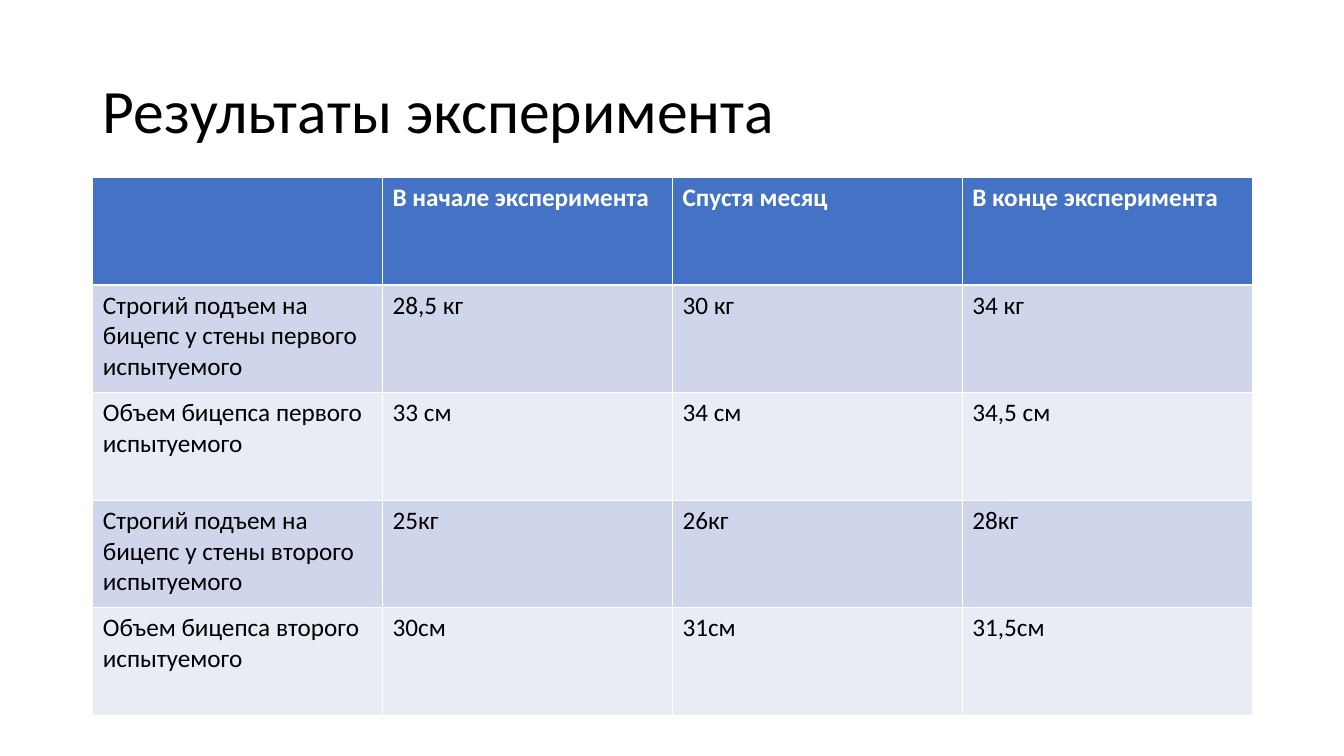
"""Build the slide with the table of experiment results."""
from pptx import Presentation
from pptx.dml.color import RGBColor
from pptx.enum.text import MSO_ANCHOR
from pptx.util import Inches, Pt

COLORS = {
    "header": "4472C4",
    "odd_row": "CFD5EA",
    "even_row": "E9EBF5",
    "header_text": "FFFFFF",
    "text": "000000",
}
FONT = "Calibri"
RESULTS = [
    ["", "В начале эксперимента", "Спустя месяц", "В конце эксперимента"],
    ["Строгий подъем на бицепс у стены первого испытуемого", "28,5 кг", "30 кг", "34 кг"],
    ["Объем бицепса первого испытуемого", "33 см", "34 см", "34,5 см"],
    ["Строгий подъем на бицепс у стены второго испытуемого", "25кг", "26кг", "28кг"],
    ["Объем бицепса второго испытуемого", "30см", "31см", "31,5см"],
]


def style_font(font, size, color, bold=False):
    font.name = FONT
    font.size = Pt(size)
    font.bold = bold
    font.color.rgb = RGBColor.from_string(COLORS[color])


presentation = Presentation()
presentation.slide_width = Inches(13.33)
presentation.slide_height = Inches(7.5)
slide = presentation.slides.add_slide(presentation.slide_layouts[6])

title = slide.shapes.add_textbox(
    Inches(0.92), Inches(0.4), Inches(11.5), Inches(1.45)
).text_frame
title.word_wrap = True
title.vertical_anchor = MSO_ANCHOR.MIDDLE
heading = title.paragraphs[0]
heading.text = "Результаты эксперимента"
heading.line_spacing = 0.9
style_font(heading.font, 44, "text")

results_table = slide.shapes.add_table(
    len(RESULTS), len(RESULTS[0]), Inches(0.92), Inches(1.76), Inches(11.5), Inches(5.34)
).table

for row_index, values in enumerate(RESULTS):
    is_header = row_index == 0
    if is_header:
        fill_color = "header"
    else:
        fill_color = "odd_row" if row_index % 2 else "even_row"
    for column_index, value in enumerate(values):
        cell = results_table.cell(row_index, column_index)
        cell.fill.solid()
        cell.fill.fore_color.rgb = RGBColor.from_string(COLORS[fill_color])
        cell.text = value
        style_font(
            cell.text_frame.paragraphs[0].font,
            18,
            "header_text" if is_header else "text",
            bold=is_header,
        )

presentation.save("out.pptx")
